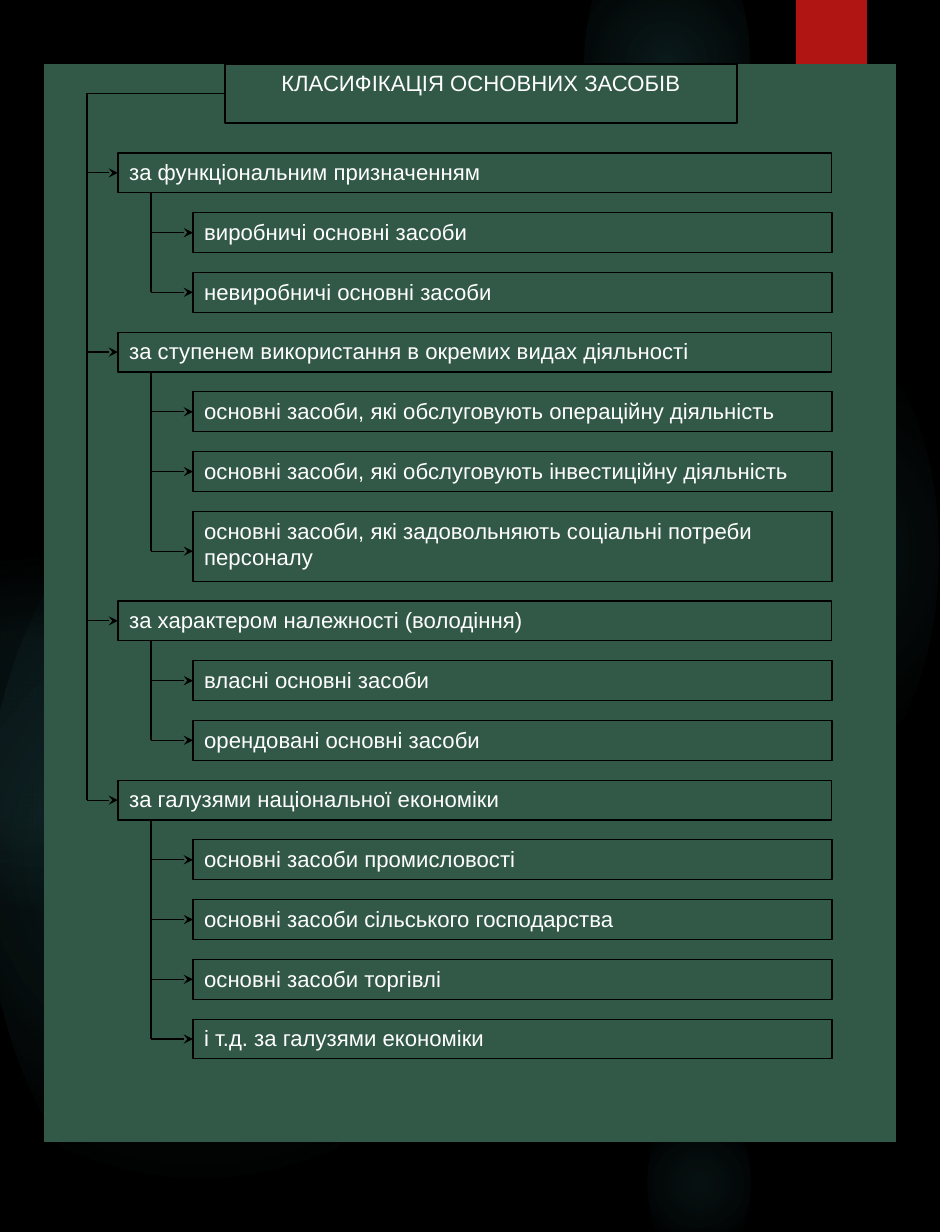
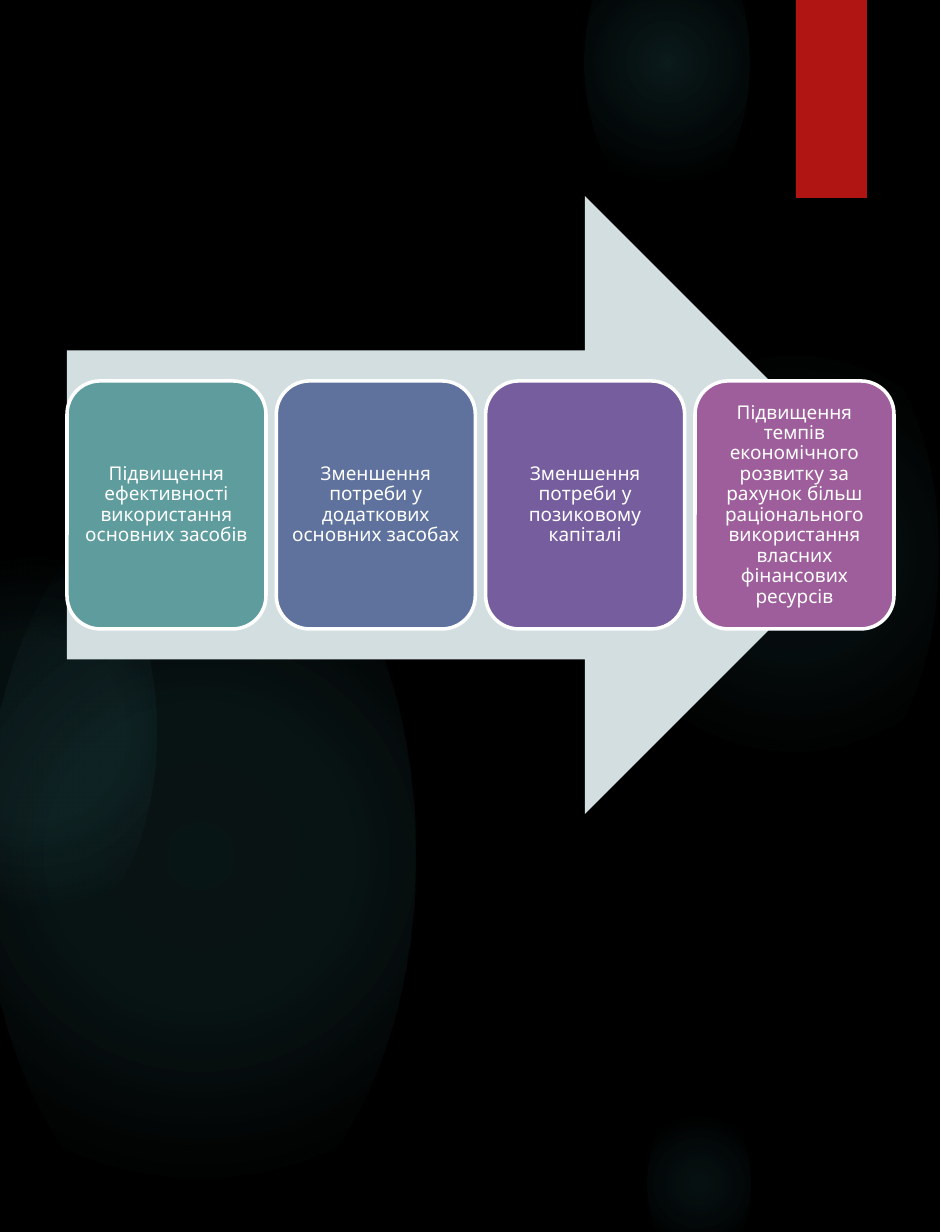
from lxml.etree import SubElement
from pptx import Presentation
from pptx.dml.color import RGBColor
from pptx.enum.shapes import MSO_CONNECTOR, MSO_SHAPE
from pptx.enum.text import MSO_ANCHOR, MSO_AUTO_SIZE, PP_ALIGN
from pptx.oxml import parse_xml
from pptx.oxml.ns import nsdecls, qn
from pptx.util import Pt

SCALE = 8042
SLIDE_SIZE = (940, 1232)
BLACK, WHITE, GREEN, RED = "000000", "FFFFFF", "325948", "B01513"
GLOW, ARROW_GREY = "50B9C1", "D2DEDF"

GLOWS = [
    ((648, 301, 290, 506), [(0, 7), (36, 6), (69, 0)]),
    ((585, -82, 165, 288), [(0, 14), (36, 7), (73, 0)]),
    ((648, 1095, 102, 177), [(0, 9), (36, 5), (66, 0)]),
    ((-16, 479, 431, 753), [(0, 11), (36, 10), (75, 0)]),
    ((-86, 520, 243, 424), [(0, 8), (36, 8), (72, 0)]),
]
RIBBON = (796, 0, 71, 198)

TITLE = "КЛАСИФІКАЦІЯ ОСНОВНИХ ЗАСОБІВ"
TITLE_BOX = (225, 64, 512, 59)
PANEL = (44, 64, 852, 1078)
GROUPS = [
    ("за функціональним призначенням", [
        ("виробничі основні засоби", 1),
        ("невиробничі основні засоби", 1),
    ]),
    ("за ступенем використання в окремих видах діяльності", [
        ("основні засоби, які обслуговують операційну діяльність", 1),
        ("основні засоби, які обслуговують інвестиційну діяльність", 1),
        ("основні засоби, які задовольняють соціальні потреби персоналу", 2),
    ]),
    ("за характером належності (володіння)", [
        ("власні основні засоби", 1),
        ("орендовані основні засоби", 1),
    ]),
    ("за галузями національної економіки", [
        ("основні засоби промисловості", 1),
        ("основні засоби сільського господарства", 1),
        ("основні засоби торгівлі", 1),
        ("і т.д. за галузями економіки", 1),
    ]),
]
ROWS_TOP, ROWS_BOTTOM, ROWS_RIGHT = 153, 1059, 832
GROUP_LEFT, ITEM_LEFT = 118, 193
MAIN_TRUNK, GROUP_TRUNK = 87, 151

BIG_ARROW = (67, 196, 827, 618)
CARD_TOP, CARD_WIDTH, CARD_HEIGHT, CARD_MARGIN = 381, 199, 248, 6
CARDS = [
    ("Підвищення ефективності використання основних засобів", "5F9C9D"),
    ("Зменшення потреби у додаткових основних засобах", "5F729D"),
    ("Зменшення потреби у позиковому капіталі", "765E9E"),
    ("Підвищення темпів економічного розвитку за рахунок більш "
     "раціонального використання власних фінансових ресурсів", "9E5E9B"),
]


def px(value):
    return round(value * SCALE)


def color(value):
    return RGBColor.from_string(value)


def paint(shape, fill=None, line=None, width=0.75):
    shape.shadow.inherit = False
    if fill:
        shape.fill.solid()
        shape.fill.fore_color.rgb = color(fill)
    if line:
        shape.line.color.rgb = color(line)
        shape.line.width = Pt(width)
    else:
        shape.line.fill.background()


def add_shape(slide, kind, box, fill=None, line=None, width=0.75):
    shape = slide.shapes.add_shape(kind, *map(px, box))
    paint(shape, fill, line, width)
    return shape


def write(shape, text, size, font, alignment, anchor):
    frame = shape.text_frame
    frame.text = text
    frame.word_wrap = True
    frame.auto_size = MSO_AUTO_SIZE.NONE
    frame.vertical_anchor = anchor
    paragraph = frame.paragraphs[0]
    paragraph.alignment = alignment
    run_font = paragraph.runs[0].font
    run_font.size, run_font.name = Pt(size), font
    run_font.color.rgb = color(WHITE)
    return paragraph


def add_line(slide, start, end, arrow=False):
    connector = slide.shapes.add_connector(
        MSO_CONNECTOR.STRAIGHT, *map(px, (*start, *end)))
    connector.line.color.rgb = color(BLACK)
    connector.line.width = Pt(0.75)
    properties = connector._element.spPr
    if arrow:
        SubElement(properties.find(qn("a:ln")), qn("a:tailEnd"), type="stealth")
    SubElement(properties, qn("a:effectLst"))
    return connector


def add_glow(slide, box, stops):
    shape = add_shape(slide, MSO_SHAPE.OVAL, box)
    stop_xml = "".join(
        f'<a:gs pos="{position * 1000}"><a:srgbClr val="{GLOW}">'
        f'<a:alpha val="{alpha * 1000}"/></a:srgbClr></a:gs>'
        for position, alpha in stops)
    gradient = parse_xml(
        f'<a:gradFill {nsdecls("a")} rotWithShape="1"><a:gsLst>{stop_xml}</a:gsLst>'
        '<a:path path="circle"><a:fillToRect l="50000" t="50000" r="50000" '
        'b="50000"/></a:path></a:gradFill>')
    shape._element.spPr.find(qn("a:ln")).addprevious(gradient)
    return shape


def add_ribbon(slide):
    ribbon = add_shape(slide, MSO_SHAPE.RECTANGLE, RIBBON, RED)
    ribbon._element.spPr.find(qn("a:effectLst")).append(parse_xml(
        f'<a:outerShdw {nsdecls("a")} blurRad="38100" dist="25400" dir="5400000" '
        f'rotWithShape="0"><a:srgbClr val="{BLACK}"><a:alpha val="45000"/>'
        '</a:srgbClr></a:outerShdw>'))
    return ribbon


def build_master(master, slide):
    master.background.fill.solid()
    master.background.fill.fore_color.rgb = color(BLACK)
    decorations = [add_glow(slide, box, stops) for box, stops in GLOWS]
    decorations.append(add_ribbon(slide))
    for number, shape in enumerate(decorations, 101):
        shape._element.nvSpPr.cNvPr.set("id", str(number))
        master.shapes._spTree.append(shape._element)


def row_units(lines):
    return 2 + 1.5 * (lines - 1)


def add_row(slide, text, lines, left, top, unit, trunk):
    box = (left, top, ROWS_RIGHT - left, row_units(lines) * unit)
    row = add_shape(slide, MSO_SHAPE.RECTANGLE, box, GREEN, BLACK)
    write(row, text, 14, "Arial", PP_ALIGN.LEFT, MSO_ANCHOR.TOP)
    entry = top + lines * unit
    arrow = add_line(slide, (trunk, entry), (left, entry), arrow=True)
    if lines == 1:
        arrow.end_connect(row, 1)
    return entry


def build_classification(slide):
    add_shape(slide, MSO_SHAPE.RECTANGLE, PANEL, GREEN)

    title = slide.shapes.title
    title.left, title.top, title.width, title.height = map(px, TITLE_BOX)
    title.fill.solid()
    title.fill.fore_color.rgb = color(GREEN)
    title.line.color.rgb = color(BLACK)
    title.line.width = Pt(0.75)
    write(title, TITLE, 14, "Arial", PP_ALIGN.CENTER, MSO_ANCHOR.TOP)
    slide.shapes._spTree.append(title._element)

    line_counts = [lines for _, items in GROUPS for lines in [1] + [n for _, n in items]]
    total_units = sum(map(row_units, line_counts)) + len(line_counts) - 1
    unit = (ROWS_BOTTOM - ROWS_TOP) / total_units

    top = ROWS_TOP
    for heading, items in GROUPS:
        group_entry = add_row(slide, heading, 1, GROUP_LEFT, top, unit, MAIN_TRUNK)
        group_bottom = top + 2 * unit
        top = group_bottom + unit
        for text, lines in items:
            item_entry = add_row(slide, text, lines, ITEM_LEFT, top, unit, GROUP_TRUNK)
            top += (row_units(lines) + 1) * unit
        add_line(slide, (GROUP_TRUNK, group_bottom), (GROUP_TRUNK, item_entry))

    title_left, title_top, _, title_height = TITLE_BOX
    title_middle = title_top + title_height / 2
    link = add_line(slide, (title_left, title_middle), (MAIN_TRUNK, title_middle))
    link.begin_connect(title, 1)
    add_line(slide, (MAIN_TRUNK, title_middle), (MAIN_TRUNK, group_entry))


def build_effects(slide):
    add_shape(slide, MSO_SHAPE.RIGHT_ARROW, BIG_ARROW, ARROW_GREY)
    left, _, width, _ = BIG_ARROW
    pitch = (width - CARD_WIDTH) / (len(CARDS) - 1)
    for index, (text, fill) in enumerate(CARDS):
        box = (left + index * pitch, CARD_TOP, CARD_WIDTH, CARD_HEIGHT)
        card = add_shape(slide, MSO_SHAPE.ROUNDED_RECTANGLE, box, fill, WHITE, 2.25)
        frame = card.text_frame
        frame.margin_left = frame.margin_right = px(CARD_MARGIN)
        frame.margin_top = frame.margin_bottom = px(CARD_MARGIN)
        paragraph = write(card, text, 12, "Quicksand", PP_ALIGN.CENTER, MSO_ANCHOR.MIDDLE)
        paragraph.line_spacing = 0.9
        paragraph.space_after = Pt(4)


def main():
    presentation = Presentation()
    presentation.slide_width, presentation.slide_height = map(px, SLIDE_SIZE)
    title_only, blank = presentation.slide_layouts[5], presentation.slide_layouts[6]
    classification = presentation.slides.add_slide(title_only)
    build_master(presentation.slide_master, classification)
    build_classification(classification)
    build_effects(presentation.slides.add_slide(blank))
    presentation.save("out.pptx")


if __name__ == "__main__":
    main()
